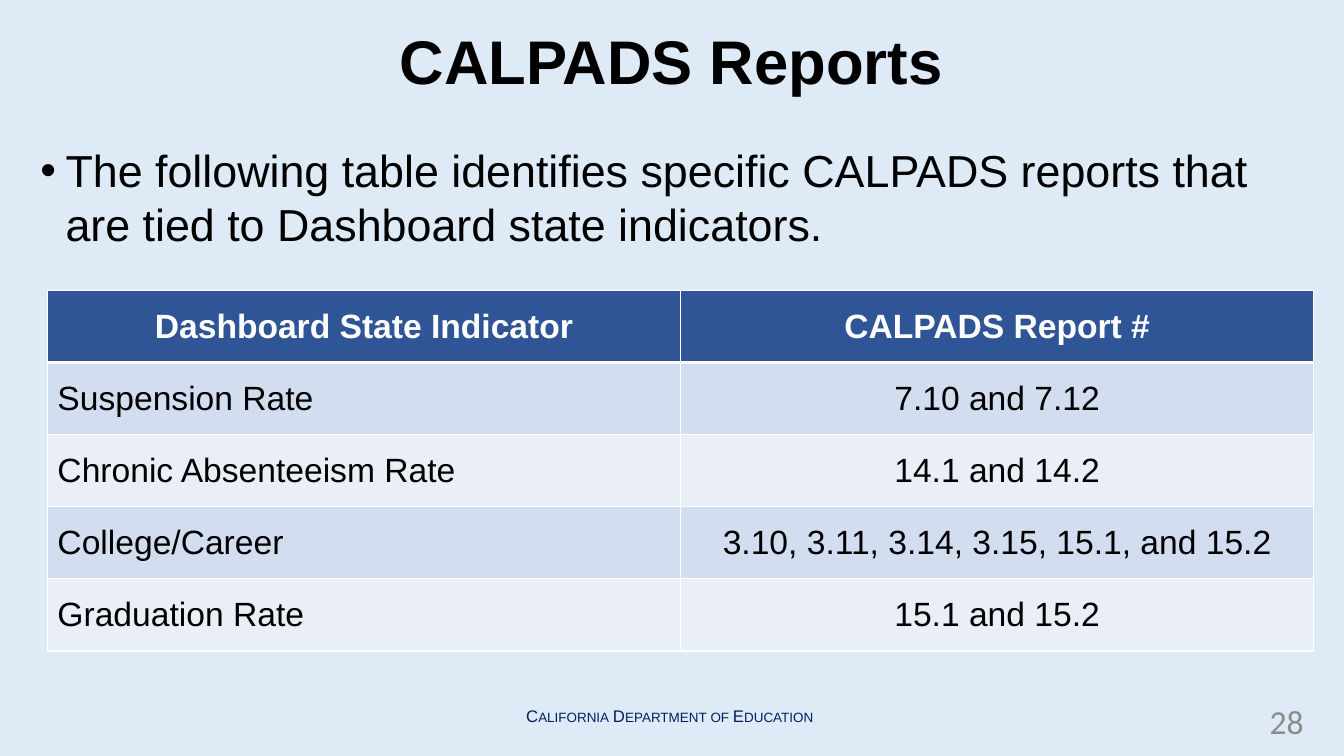
import pptx
import pptx.util
import pptx.dml.color
import pptx.enum.text
import pptx.oxml

Inches, Pt = pptx.util.Inches, pptx.util.Pt
RGBColor = pptx.dml.color.RGBColor
ALIGN, ANCHOR = pptx.enum.text.PP_ALIGN, pptx.enum.text.MSO_ANCHOR
AUTO = pptx.enum.text.MSO_AUTO_SIZE

SKY = RGBColor(0xDE, 0xEB, 0xF7)
BLUE = RGBColor(0x2F, 0x55, 0x97)
BAND = RGBColor(0xD2, 0xDE, 0xEF)
PALE = RGBColor(0xEA, 0xEF, 0xF7)
NAVY = RGBColor(0x00, 0x20, 0x60)
GRAY = RGBColor(0x8C, 0x8C, 0x8C)
WHITE = RGBColor(0xFF, 0xFF, 0xFF)
BLACK = RGBColor(0, 0, 0)

TITLE = {"name": "Arial", "size": Pt(44), "bold": True}
BODY = {"name": "Arial", "size": Pt(32)}
CELL = {"name": "Arial", "size": Pt(24), "bold": False}
HEADER = {"name": "Arial", "size": Pt(24), "bold": True}
FOOTER = {"name": "Arial", "size": Pt(12)}
NUMBER = {"name": "Calibri", "size": Pt(24)}

REPORTS = [
    ("Dashboard State Indicator", "CALPADS Report #"),
    ("Suspension Rate", "7.10 and 7.12"),
    ("Chronic Absenteeism Rate", "14.1 and 14.2"),
    ("College/Career", "3.10, 3.11, 3.14, 3.15, 15.1, and 15.2"),
    ("Graduation Rate", "15.1 and 15.2"),
]


def write(tf, text, font, color=BLACK, align=ALIGN.LEFT):
    """Write one formatted run and return its paragraph."""
    p = tf.paragraphs[0]
    p.alignment = align
    r = p.add_run()
    r.text = text
    for key, value in font.items():
        setattr(r.font, key, value)
    r.font.color.rgb = color
    return p


def place(sp, box, **frame):
    """Move a shape to a box in inches and format its text frame."""
    sp.left, sp.top, sp.width, sp.height = map(Inches, box)
    settings = {"word_wrap": True, "auto_size": AUTO.NONE, **frame}
    for key, value in settings.items():
        setattr(sp.text_frame, key, value)
    return sp.text_frame


def add_title(s, box, text):
    """Fill the title placeholder."""
    tf = place(s.shapes.title, box, vertical_anchor=ANCHOR.MIDDLE)
    write(tf, text, TITLE, align=ALIGN.CENTER).line_spacing = 0.9


def add_body(s, box, text):
    """Fill the body placeholder with one bullet."""
    tf = place(s.placeholders[1], box, vertical_anchor=ANCHOR.TOP)
    pPr = tf.paragraphs[0]._p.get_or_add_pPr()
    pPr.set("marL", str(Inches(0.25)))
    pPr.set("indent", str(-Inches(0.25)))
    bullet = pptx.oxml.parse_xml(
        '<a:buChar xmlns:a="http://schemas.openxmlformats.org/drawingml/2006/main" char="•"/>')
    pPr.append(bullet)
    p = write(tf, text, BODY)
    p.space_before = Pt(0)
    p.space_after = Pt(3)


def set_borders(cell, widths):
    """Draw white cell borders with widths in points by side."""
    tcPr = cell._tc.get_or_add_tcPr()
    for side, width in widths.items():
        tcPr.append(pptx.oxml.parse_xml(
            f'<a:ln{side} xmlns:a="http://schemas.openxmlformats.org/drawingml/2006/main"'
            f' w="{Pt(width)}"><a:solidFill><a:srgbClr val="{WHITE}"/></a:solidFill></a:ln{side}>'))


def add_reports(s, box, rows):
    """Add the banded table of reports."""
    left, top, width, height = map(Inches, box)
    table = s.shapes.add_table(len(rows), len(rows[0]), left, top, width, height).table
    for i, row in enumerate(rows):
        header = i == 0
        for j, text in enumerate(row):
            cell = table.cell(i, j)
            set_borders(cell, {"L": 1, "R": 1, "T": 3 if i == 1 else 1, "B": 3 if header else 1})
            cell.fill.solid()
            cell.fill.fore_color.rgb = BLUE if header else BAND if i % 2 else PALE
            cell.vertical_anchor = ANCHOR.MIDDLE
            write(cell.text_frame, text, HEADER if header else CELL,
                  WHITE if header else BLACK,
                  ALIGN.CENTER if header or j else ALIGN.LEFT)


def add_footer(s, box, text):
    """Add the department name in small capitals."""
    tf = place(s.shapes.add_textbox(0, 0, 0, 0), box, word_wrap=False)
    p = write(tf, text, FOOTER, NAVY)
    p.runs[0]._r.get_or_add_rPr().set("cap", "small")


def add_number(s, box, text):
    """Add the slide number."""
    tf = place(s.shapes.add_textbox(0, 0, 0, 0), box, vertical_anchor=ANCHOR.MIDDLE)
    write(tf, text, NUMBER, GRAY, ALIGN.RIGHT)


def main():
    """Build and save the slide."""
    prs = pptx.Presentation()
    prs.slide_width, prs.slide_height = Inches(13.33), Inches(7.5)
    s = prs.slides.add_slide(prs.slide_layouts[1])
    s.background.fill.solid()
    s.background.fill.fore_color.rgb = SKY
    add_title(s, (0.45, 0.18, 12.42, 0.93), "CALPADS Reports")
    add_body(s, (0.3, 1.37, 12.47, 1.4),
             "The following table identifies specific CALPADS reports that "
             "are tied to Dashboard state indicators.")
    add_reports(s, (0.47, 2.88, 12.56, 3.58), REPORTS)
    add_footer(s, (5.12, 6.95, 3.09, 0.3), "California Department of Education")
    add_number(s, (10.03, 6.95, 3, 0.4), "28")
    prs.save("out.pptx")


if __name__ == "__main__":
    main()
